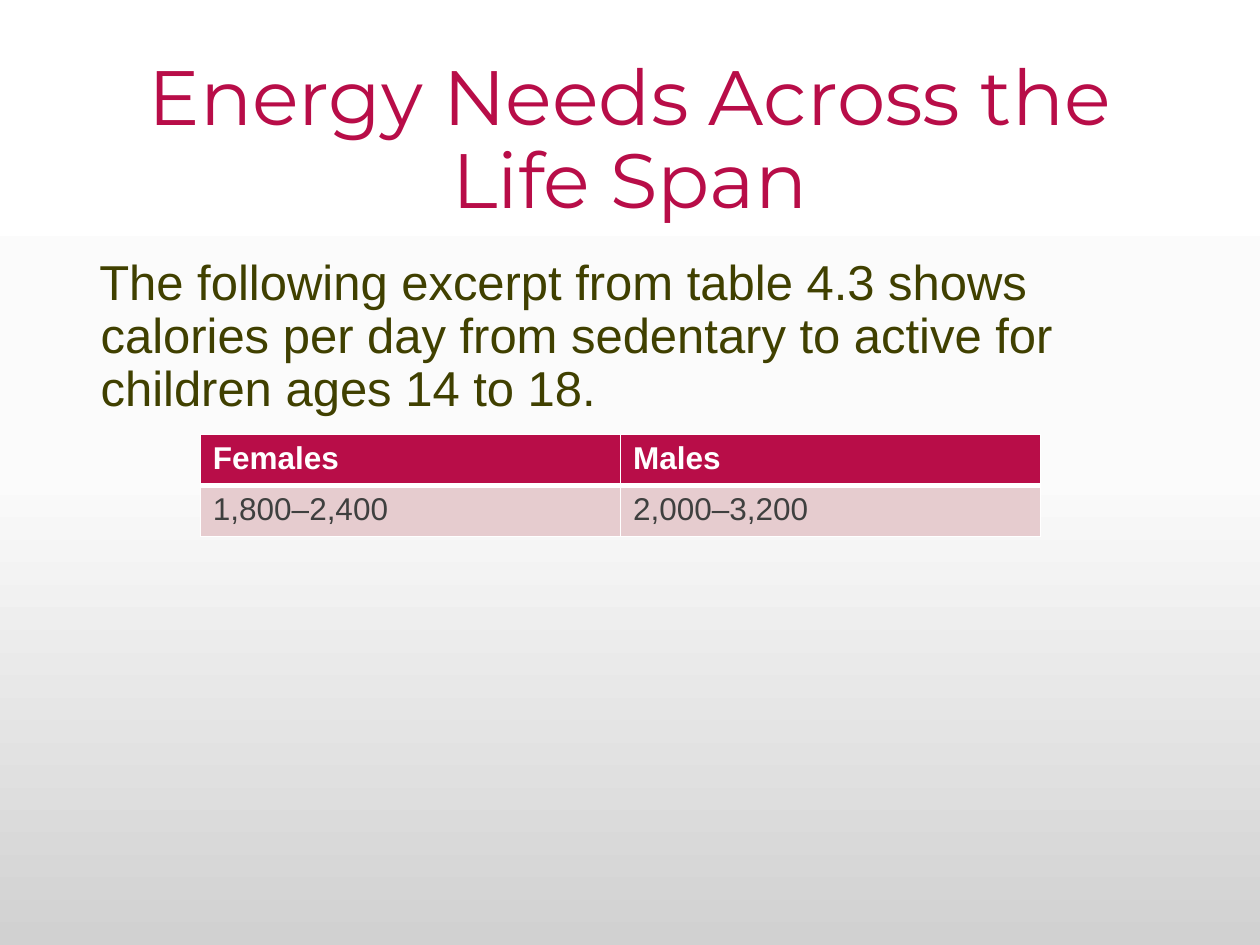
from copy import deepcopy

from lxml.etree import SubElement
from pptx import Presentation
from pptx.dml.color import RGBColor
from pptx.enum.text import MSO_ANCHOR, PP_ALIGN
from pptx.oxml.ns import qn
from pptx.util import Inches, Pt

RED, OLIVE, GRAY = "B80D48", "404000", "3F403F"
PINK, WHITE = "E6CCCF", "FFFFFF"


def color(value):
    return RGBColor.from_string(value)


def style(para, font, size, shade, bold=False):
    for run in para.runs:
        run.font.name = font
        run.font.size = Pt(size)
        run.font.bold = bold
        run.font.color.rgb = color(shade)


def paint_back(slide, shades):
    """Vertical gradient with evenly spaced stops."""
    fill = slide.background.fill
    fill.gradient()
    fill.gradient_angle = 270
    stops = next(slide.element.iter(qn("a:gsLst")))
    while len(stops) < len(shades):
        stops.append(deepcopy(stops[-1]))
    for i, (stop, shade) in enumerate(zip(fill.gradient_stops, shades)):
        stop.position = i / (len(shades) - 1)
        stop.color.rgb = color(shade)


def add_text(slide, box, text, font, size, shade):
    frame = slide.shapes.add_textbox(*map(Inches, box)).text_frame
    frame.word_wrap = True
    frame.text = text
    para = frame.paragraphs[0]
    para.line_spacing = 0.9
    style(para, font, size, shade)
    return frame


def add_title(slide, box, text):
    frame = add_text(slide, box, text, "Montserrat", 44, RED)
    frame.vertical_anchor = MSO_ANCHOR.MIDDLE
    frame.paragraphs[0].alignment = PP_ALIGN.CENTER


def add_body(slide, box, text):
    frame = add_text(slide, box, text, "Arial", 28, OLIVE)
    para = frame.paragraphs[0]
    para.space_before = Pt(10)
    props = para._p.get_or_add_pPr()
    props.set("marL", str(Inches(0.01)))
    props.set("indent", str(Inches(-0.01)))


def add_borders(cell, low):
    """White cell edges; low is the width of the bottom one."""
    props = cell._tc.get_or_add_tcPr()
    widths = {"lnL": 1, "lnR": 1, "lnT": 1, "lnB": low}
    for i, (tag, width) in enumerate(widths.items()):
        line = SubElement(props, qn(f"a:{tag}"), w=str(Pt(width)))
        fill = SubElement(line, qn("a:solidFill"))
        SubElement(fill, qn("a:srgbClr"), val=WHITE)
        props.insert(i, line)


def add_grid(slide, box, rows):
    left, top, width, height = map(Inches, box)
    table = slide.shapes.add_table(
        len(rows), len(rows[0]), left, top, width, height).table
    for r, row in enumerate(rows):
        head = r == 0
        for c, text in enumerate(row):
            cell = table.cell(r, c)
            cell.text = text
            style(cell.text_frame.paragraphs[0], "Arial", 18,
                  WHITE if head else GRAY, head)
            cell.fill.solid()
            cell.fill.fore_color.rgb = color(RED if head else PINK)
            add_borders(cell, 3 if head else 1)


def main():
    deck = Presentation()
    deck.slide_width, deck.slide_height = Inches(10), Inches(7.5)
    slide = deck.slides.add_slide(deck.slide_layouts[6])

    # Background
    paint_back(slide, [WHITE, "FBFBFB", "D1D1D1"])
    # Title and introduction
    add_title(slide, (0.69, 0.4, 8.62, 1.45),
              "Energy Needs Across the Life Span")
    add_body(slide, (0.69, 2, 8.62, 4.76),
             "The following excerpt from table 4.3 shows calories per day "
             "from sedentary to active for children ages 14 to 18.")
    # Calorie table
    add_grid(slide, (1.59, 3.45, 6.67, 0.81),
             [["Females", "Males"], ["1,800–2,400", "2,000–3,200"]])

    deck.save("out.pptx")


if __name__ == "__main__":
    main()
